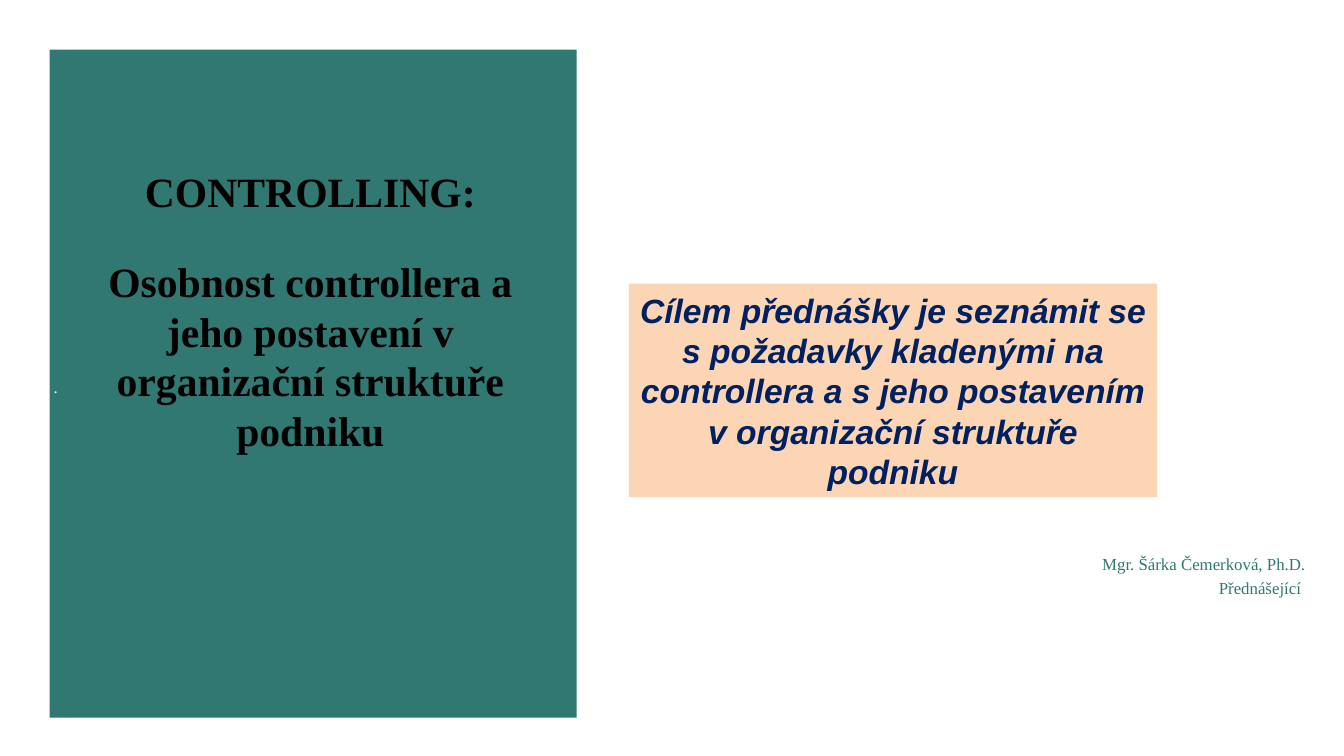
from dataclasses import dataclass

from pptx import Presentation
from pptx.dml.color import RGBColor
from pptx.enum.shapes import MSO_SHAPE
from pptx.enum.text import MSO_ANCHOR, MSO_AUTO_SIZE, PP_ALIGN
from pptx.oxml.ns import qn
from pptx.util import Inches, Pt

CENTER, LEFT, RIGHT = PP_ALIGN.CENTER, PP_ALIGN.LEFT, PP_ALIGN.RIGHT
TOP, MIDDLE = MSO_ANCHOR.TOP, MSO_ANCHOR.MIDDLE
RECTANGLE, NO_AUTOFIT = MSO_SHAPE.RECTANGLE, MSO_AUTO_SIZE.NONE
TEAL, PEACH, NAVY, BLACK, WHITE = "307871", "FCD5B5", "002060", "000000", "FFFFFF"
SERIF, SANS = "Times New Roman", "Arial"
SLIDE_WIDTH = 10
SLIDE_HEIGHT = SLIDE_WIDTH * 9 / 16


@dataclass(frozen=True)
class Box:
    left: float
    top: float
    width: float
    height: float


@dataclass(frozen=True)
class TextStyle:
    font: str
    size: float
    color: str
    align: PP_ALIGN
    bold: bool = False
    italic: bool = False
    anchor: MSO_ANCHOR = TOP
    side_inset: float = 0.07
    top_inset: float = 0.04
    gap: float = 0
    line_height: float | None = None


PANEL = Box(0.37, 0.37, 3.92, 4.97)
TITLE = Box(0.55, 0.59, 3.52, 2.78)
MARK = Box(0.33, 2.44, 3.97, 2.37)
GOAL = Box(4.68, 2.11, 3.93, 1.59)
LECTURER = Box(7.61, 4.07, 2.2, 1.26)

TITLE_STYLE = TextStyle(SERIF, 22.3, BLACK, CENTER, bold=True, top_inset=0.65,
                        gap=21.5, line_height=26.6)
MARK_STYLE = TextStyle(SERIF, 9, WHITE, LEFT, top_inset=0.36)
GOAL_STYLE = TextStyle(SANS, 18, NAVY, CENTER, bold=True, italic=True,
                       anchor=MIDDLE, side_inset=0.08, line_height=21.6)
LECTURER_STYLE = TextStyle(SERIF, 9, TEAL, RIGHT, side_inset=0.1,
                           top_inset=0.05, gap=2.2)


def rgb(color: str) -> RGBColor:
    return RGBColor.from_string(color)


def place(shape, box: Box) -> None:
    shape.left, shape.top = Inches(box.left), Inches(box.top)
    shape.width, shape.height = Inches(box.width), Inches(box.height)


def fill_solid(shape, color: str) -> None:
    shape.fill.solid()
    shape.fill.fore_color.rgb = rgb(color)


def write(shape, lines: list[str], style: TextStyle) -> None:
    frame = shape.text_frame
    frame.word_wrap = True
    frame.auto_size = NO_AUTOFIT
    frame.vertical_anchor = style.anchor
    frame.margin_left = frame.margin_right = Inches(style.side_inset)
    frame.margin_top, frame.margin_bottom = Inches(style.top_inset), Inches(0.04)
    frame.text = "\n".join(lines)
    for index, paragraph in enumerate(frame.paragraphs):
        properties = paragraph._p.get_or_add_pPr()
        properties.set("marL", "0")
        properties.set("indent", "0")
        properties.append(properties.makeelement(qn("a:buNone"), {}))
        paragraph.alignment = style.align
        paragraph.space_before = Pt(style.gap if index else 0)
        if style.line_height:
            paragraph.line_spacing = Pt(style.line_height)
        font = paragraph.font
        font.name, font.size = style.font, Pt(style.size)
        font.bold, font.italic = style.bold, style.italic
        font.color.rgb = rgb(style.color)


def add_text(slide, box: Box, lines: list[str], style: TextStyle) -> None:
    shape = slide.shapes.add_textbox(0, 0, 0, 0)
    place(shape, box)
    write(shape, lines, style)


def main() -> None:
    """Build the opening slide of the controlling lecture."""
    presentation = Presentation()
    presentation.slide_width = Inches(SLIDE_WIDTH)
    presentation.slide_height = Inches(SLIDE_HEIGHT)
    slide = presentation.slides.add_slide(presentation.slide_layouts[1])
    title, goal = slide.shapes.title, slide.placeholders[1]

    panel = slide.shapes.add_shape(RECTANGLE, 0, 0, 0, 0)
    place(panel, PANEL)
    fill_solid(panel, TEAL)
    panel.line.fill.background()
    panel.shadow.inherit = False
    title.element.addprevious(panel.element)

    place(title, TITLE)
    write(title, ["CONTROLLING:",
                  "Osobnost controllera a jeho postavení v organizační struktuře podniku"],
          TITLE_STYLE)
    add_text(slide, MARK, ["."], MARK_STYLE)
    place(goal, GOAL)
    fill_solid(goal, PEACH)
    write(goal, ["Cílem přednášky je seznámit se s požadavky kladenými na controllera "
                 "a s jeho postavením v organizační struktuře podniku"], GOAL_STYLE)
    add_text(slide, LECTURER, ["Mgr. Šárka Čemerková, Ph.D.", "Přednášející "],
             LECTURER_STYLE)
    presentation.save("out.pptx")


if __name__ == "__main__":
    main()
